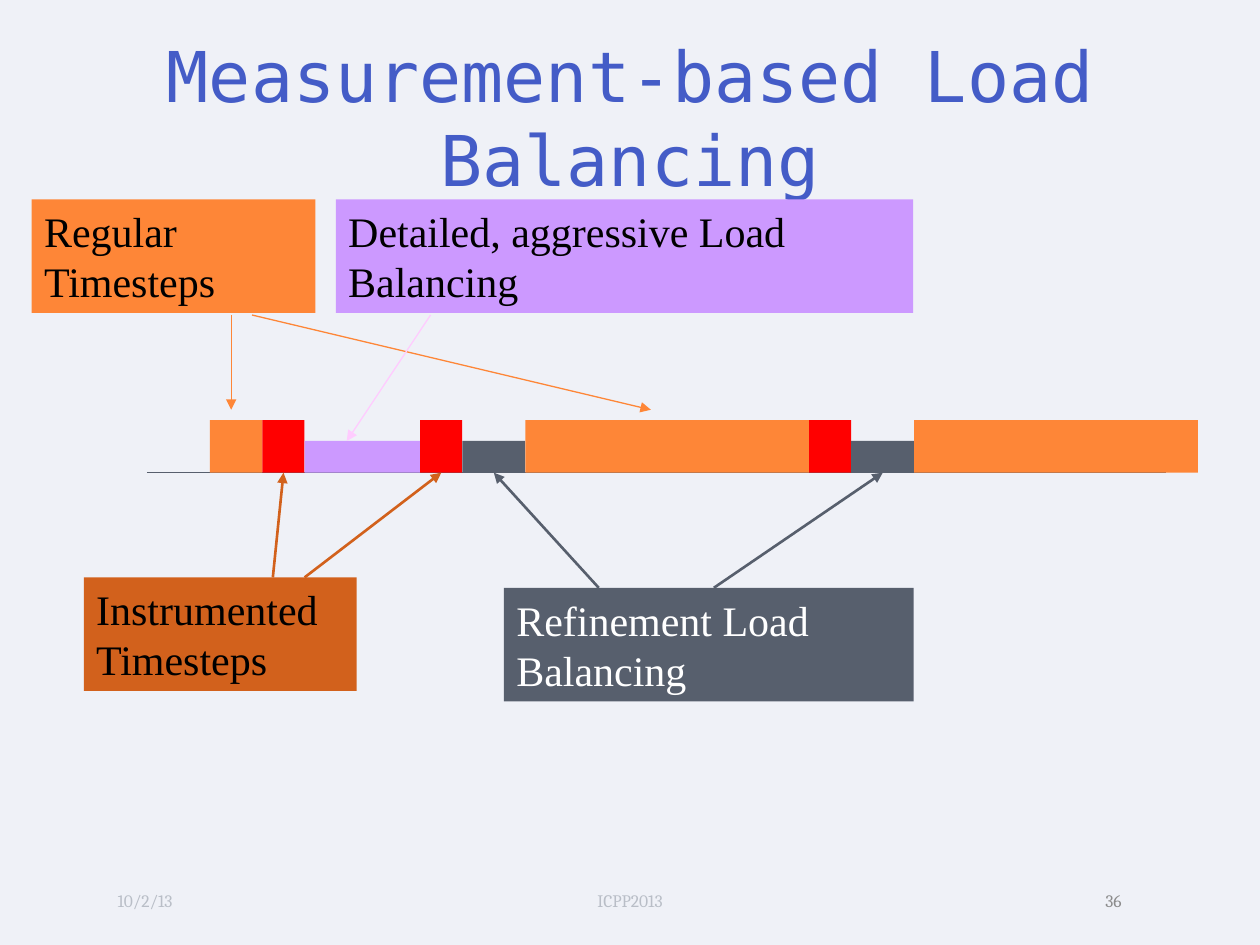
from dataclasses import dataclass

from lxml import etree
from pptx import Presentation
from pptx.dml.color import RGBColor
from pptx.enum import shapes, text
from pptx.oxml import ns
from pptx.util import Cm, Pt


@dataclass(frozen=True)
class Theme:
    """Colours, fonts and type sizes of the slide."""
    background: str = "EFF1F7"
    title: str = "445CC7"
    footer: str = "B9BEC7"
    number: str = "8C8C8C"
    regular: str = "FE8637"
    instrumented: str = "D2611C"
    measured: str = "FF0000"
    aggressive: str = "CC99FF"
    aggressive_arrow: str = "FFCCFF"
    refinement: str = "575F6D"
    dark: str = "000000"
    light: str = "FFFFFF"
    title_font: str = "DejaVu Sans Mono"
    label_font: str = "Times New Roman"
    footer_font: str = "Cambria"
    title_size: int = 40
    label_size: int = 24
    footer_size: int = 10


THEME = Theme()
BASELINE = 9.53
TIMELINE_START = 4.23
TALL, LOW = 1.06, 0.64
REGULAR = (5.72, TALL, THEME.regular)
MEASURED = (0.85, TALL, THEME.measured)
REFINEMENT = (1.27, LOW, THEME.refinement)
STEPS = [
    (1.06, TALL, THEME.regular), MEASURED, (2.33, LOW, THEME.aggressive),
    MEASURED, REFINEMENT, REGULAR, MEASURED, REFINEMENT, REGULAR,
]


def write_text(shape, wording, font, size, color, align, anchor):
    """Put one formatted paragraph into a shape."""
    frame = shape.text_frame
    frame.word_wrap = True
    frame.vertical_anchor = anchor
    frame.text = wording
    paragraph = frame.paragraphs[0]
    paragraph.alignment = align
    for run in paragraph.runs:
        run.font.name = font
        run.font.size = Pt(size)
        run.font.color.rgb = RGBColor.from_string(color)


def add_text(slide, box, wording, font, size, color, align):
    """Add a vertically centred text box."""
    shape = slide.shapes.add_textbox(*map(Cm, box))
    write_text(shape, wording, font, size, color, align, text.MSO_ANCHOR.MIDDLE)


def add_block(slide, box, color):
    """Add a plain filled rectangle."""
    shape = slide.shapes.add_shape(shapes.MSO_SHAPE.RECTANGLE, *map(Cm, box))
    shape.shadow.inherit = False
    shape.fill.solid()
    shape.fill.fore_color.rgb = RGBColor.from_string(color)
    shape.line.fill.background()
    return shape


def add_label(slide, box, wording, fill, color=THEME.dark):
    """Add a coloured rectangle with a left-aligned caption."""
    shape = add_block(slide, box, fill)
    write_text(shape, wording, THEME.label_font, THEME.label_size, color,
               text.PP_ALIGN.LEFT, text.MSO_ANCHOR.TOP)


def add_line(slide, start, end, color, width=0.75):
    """Add a straight line without shadow."""
    line = slide.shapes.add_connector(
        shapes.MSO_CONNECTOR.STRAIGHT, *map(Cm, start + end))
    line.line.color.rgb = RGBColor.from_string(color)
    line.line.width = Pt(width)
    etree.SubElement(line._element.spPr, ns.qn("a:effectLst"))
    return line


def add_arrow(slide, start, end, color, width=0.75):
    """Add a line with a triangle at its end."""
    arrow = add_line(slide, start, end, color, width)
    outline = arrow.line._get_or_add_ln()
    etree.SubElement(outline, ns.qn("a:tailEnd"), type="triangle")
    return arrow


def add_timeline(slide):
    """Add the baseline and the consecutive steps standing on it."""
    add_line(slide, (2.96, BASELINE), (23.5, BASELINE), THEME.refinement)
    blocks = []
    left = TIMELINE_START
    for width, height, color in STEPS:
        box = (left, BASELINE - height, width, height)
        blocks.append(add_block(slide, box, color))
        left += width
    return blocks


def add_labels(slide):
    """Add the four captions around the timeline."""
    add_label(slide, (0.64, 4.02, 5.72, 2.29), "Regular Timesteps", THEME.regular)
    add_label(slide, (6.77, 4.02, 11.64, 2.29),
              "Detailed, aggressive Load Balancing", THEME.aggressive)
    add_label(slide, (1.69, 11.64, 5.5, 2.29),
              "Instrumented Timesteps", THEME.instrumented)
    add_label(slide, (10.16, 11.85, 8.26, 2.29),
              "Refinement Load Balancing", THEME.refinement, THEME.light)


def add_arrows(slide, blocks):
    """Point from the captions to their steps."""
    for start, end, color in [
        ((4.66, 6.35), (4.66, 8.26), THEME.regular),
        ((5.08, 6.35), (13.12, 8.26), THEME.regular),
        ((8.68, 6.35), (6.99, 8.89), THEME.aggressive_arrow),
    ]:
        add_arrow(slide, start, end, color)
    for start, step, color in [
        ((5.5, 11.64), 1, THEME.instrumented),
        ((6.14, 11.64), 3, THEME.instrumented),
        ((12.07, 11.85), 4, THEME.refinement),
        ((14.39, 11.85), 7, THEME.refinement),
    ]:
        arrow = add_arrow(slide, start, start, color, 1.5)
        arrow.end_connect(blocks[step], 2)


def add_footer(slide):
    """Add date, event and slide number."""
    for left, width, wording, color, align in [
        (2.12, 5.08, "10/2/13", THEME.footer, text.PP_ALIGN.LEFT),
        (8.68, 8.04, "ICPP2013", THEME.footer, text.PP_ALIGN.CENTER),
        (18.2, 4.66, "36", THEME.number, text.PP_ALIGN.RIGHT),
    ]:
        add_text(slide, (left, 17.65, width, 1.02), wording,
                 THEME.footer_font, THEME.footer_size, color, align)


def main():
    """Build and save the presentation."""
    presentation = Presentation()
    presentation.slide_width = Cm(25.4)
    presentation.slide_height = Cm(19.05)
    slide = presentation.slides.add_slide(presentation.slide_layouts[6])
    slide.background.fill.solid()
    slide.background.fill.fore_color.rgb = RGBColor.from_string(THEME.background)
    add_text(slide, (0, 0.76, 25.4, 3.18), "Measurement-based Load Balancing",
             THEME.title_font, THEME.title_size, THEME.title, text.PP_ALIGN.CENTER)
    add_footer(slide)
    blocks = add_timeline(slide)
    add_labels(slide)
    add_arrows(slide, blocks)
    presentation.save("out.pptx")


if __name__ == "__main__":
    main()
